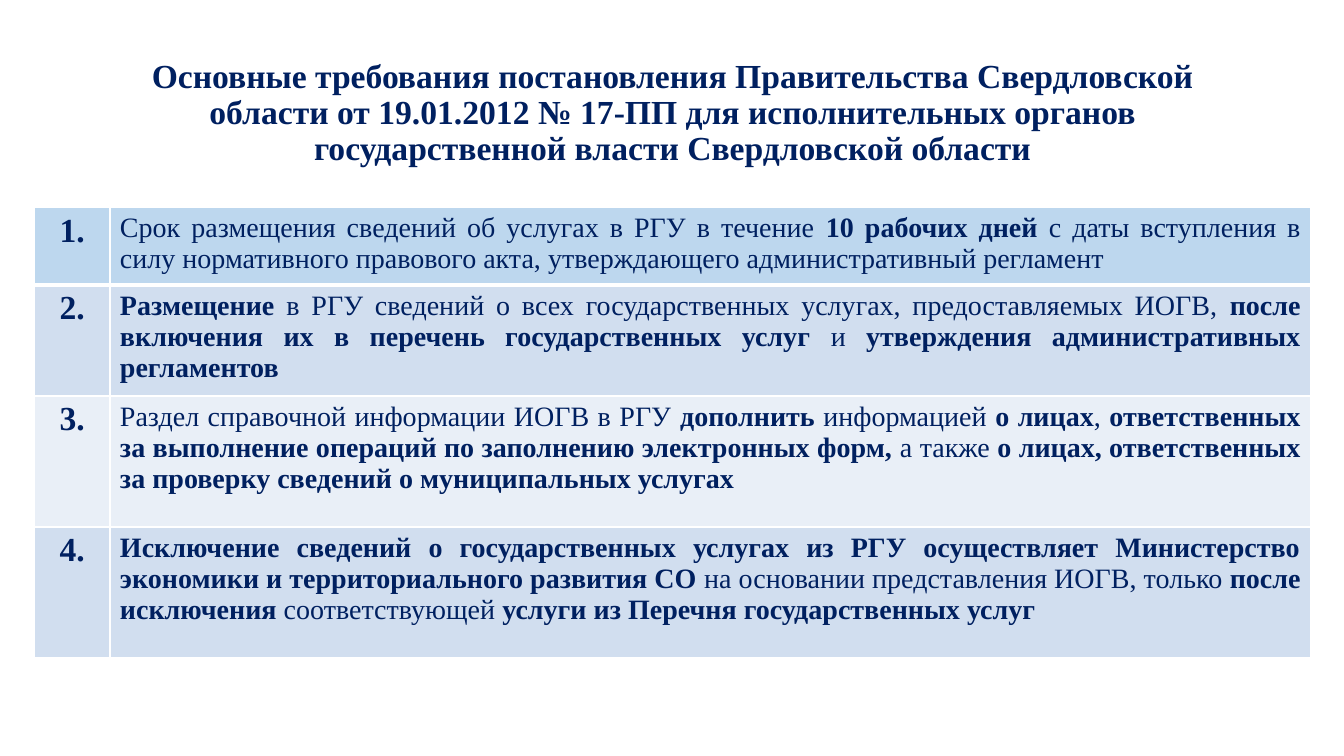
from dataclasses import dataclass

from lxml import etree
from pptx import Presentation
from pptx.dml.color import RGBColor
from pptx.enum.text import MSO_ANCHOR, PP_ALIGN
from pptx.oxml.ns import qn
from pptx.slide import Slide
from pptx.table import _Cell
from pptx.text.text import _Paragraph
from pptx.util import Inches, Pt

CENTER = PP_ALIGN.CENTER
JUSTIFY = PP_ALIGN.JUSTIFY
MIDDLE = MSO_ANCHOR.MIDDLE
FONT = "Times New Roman"
COLORS = {
    "text": "002060",
    "border": "FFFFFF",
    "header": "BDD7EE",
    "dark_band": "D1DEEF",
    "light_band": "E9EFF7",
}
LARGE_SIZE = 24
BODY_SIZE = 20
THIN_BORDER = 0.96
THICK_BORDER = 3
COLUMN_WIDTHS = (0.75, 11.91)
TITLE = (
    "Основные требования постановления Правительства Свердловской области "
    "от 19.01.2012 № 17-ПП для исполнительных органов государственной власти "
    "Свердловской области"
)


@dataclass(frozen=True)
class Run:
    text: str
    bold: bool = False


@dataclass(frozen=True)
class Requirement:
    height: float
    fill: str
    runs: tuple[Run, ...]


REQUIREMENTS = (
    Requirement(0.76, "header", (
        Run("Срок размещения сведений об услугах в РГУ в течение"),
        Run(" 10 рабочих дней ", True),
        Run("с даты вступления в силу нормативного правового акта, "
            "утверждающего административный регламент"),
    )),
    Requirement(1.09, "dark_band", (
        Run("Размещение", True),
        Run(" в РГУ сведений о всех государственных услугах, предоставляемых ИОГВ, "),
        Run("после включения их в перечень государственных услуг ", True),
        Run("и "),
        Run("утверждения административных регламентов", True),
    )),
    Requirement(1.3, "light_band", (
        Run("Раздел справочной информации ИОГВ в РГУ "),
        Run("дополнить", True),
        Run(" информацией "),
        Run("о лицах", True),
        Run(", "),
        Run("ответственных за выполнение операций по заполнению электронных форм, ", True),
        Run("а также"),
        Run(" о лицах, ответственных за проверку сведений о муниципальных услугах", True),
    )),
    Requirement(1.3, "dark_band", (
        Run("Исключение сведений о государственных услугах из РГУ осуществляет "
            "Министерство экономики и территориального развития СО ", True),
        Run("на основании представления ИОГВ, только "),
        Run("после исключения", True),
        Run(" соответствующей "),
        Run("услуги из Перечня государственных услуг", True),
    )),
)


def write_runs(paragraph: _Paragraph, runs: tuple[Run, ...], size: int, alignment: PP_ALIGN) -> None:
    paragraph.alignment = alignment
    for item in runs:
        run = paragraph.add_run()
        run.text = item.text
        run.font.name = FONT
        run.font.size = Pt(size)
        run.font.bold = item.bold
        run.font.color.rgb = RGBColor.from_string(COLORS["text"])


def style_cell(cell: _Cell, fill: str, top: float, bottom: float) -> None:
    cell.fill.solid()
    cell.fill.fore_color.rgb = RGBColor.from_string(COLORS[fill])
    properties = cell._tc.get_or_add_tcPr()
    widths = {"a:lnL": THIN_BORDER, "a:lnR": THIN_BORDER, "a:lnT": top, "a:lnB": bottom}
    for index, (tag, width) in enumerate(widths.items()):
        line = etree.Element(qn(tag), w=str(int(Pt(width))))
        solid = etree.SubElement(line, qn("a:solidFill"))
        etree.SubElement(solid, qn("a:srgbClr"), val=COLORS["border"])
        properties.insert(index, line)


def add_title(slide: Slide) -> None:
    title = slide.shapes.add_textbox(Inches(0.92), Inches(0.4), Inches(11.5), Inches(1.45))
    title.text_frame.word_wrap = True
    title.text_frame.vertical_anchor = MIDDLE
    paragraph = title.text_frame.paragraphs[0]
    paragraph.line_spacing = 0.9
    write_runs(paragraph, (Run(TITLE, True),), LARGE_SIZE, CENTER)


def add_requirements(slide: Slide) -> None:
    total_height = sum(requirement.height for requirement in REQUIREMENTS)
    table = slide.shapes.add_table(
        len(REQUIREMENTS), len(COLUMN_WIDTHS),
        Inches(0.34), Inches(2.06), Inches(sum(COLUMN_WIDTHS)), Inches(total_height),
    ).table
    for column, width in zip(table.columns, COLUMN_WIDTHS):
        column.width = Inches(width)
    for index, requirement in enumerate(REQUIREMENTS):
        table.rows[index].height = Inches(requirement.height)
        top = THICK_BORDER if index == 1 else THIN_BORDER
        bottom = THICK_BORDER if index == 0 else THIN_BORDER
        number_cell, text_cell = table.cell(index, 0), table.cell(index, 1)
        for cell in (number_cell, text_cell):
            style_cell(cell, requirement.fill, top, bottom)
        number = (Run(f"{index + 1}.", True),)
        write_runs(number_cell.text_frame.paragraphs[0], number, LARGE_SIZE, CENTER)
        write_runs(text_cell.text_frame.paragraphs[0], requirement.runs, BODY_SIZE, JUSTIFY)


def main() -> None:
    presentation = Presentation()
    presentation.slide_width = Inches(13.33)
    presentation.slide_height = Inches(7.5)
    slide = presentation.slides.add_slide(presentation.slide_layouts[6])
    add_title(slide)
    add_requirements(slide)
    presentation.save("out.pptx")


if __name__ == "__main__":
    main()
